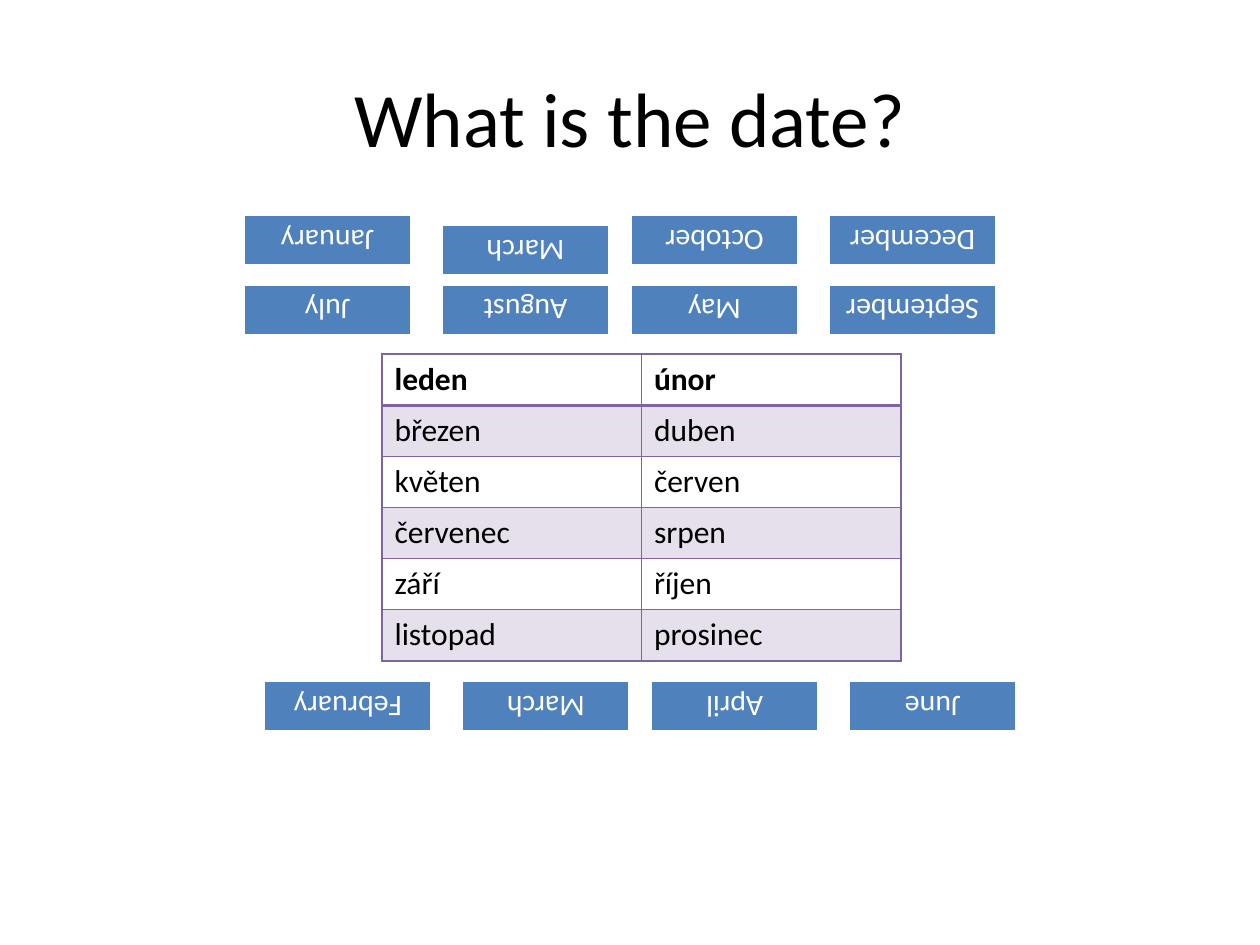
from lxml.etree import SubElement
from pptx import Presentation
from pptx.dml.color import RGBColor
from pptx.enum.shapes import MSO_SHAPE
from pptx.enum.text import MSO_ANCHOR, PP_ALIGN
from pptx.oxml.ns import qn
from pptx.util import Cm, Pt

FONT = "Calibri"
COLORS = {
    "text": "000000",
    "card": "4F81BD",
    "white": "FFFFFF",
    "border": "8064A2",
    "band": "E6E0EC",
}

CZECH_MONTHS = [
    ("leden", "únor"),
    ("březen", "duben"),
    ("květen", "červen"),
    ("červenec", "srpen"),
    ("září", "říjen"),
    ("listopad", "prosinec"),
]

CARD_LEFTS = [4.9, 8.89, 12.7, 16.69]
# Top of the row, its shift to the right, and its months
CARD_ROWS = [
    (4.32, 0, ["January", "March", "October", "December"]),
    (5.72, 0, ["July", "August", "May", "September"]),
    (13.72, 0.41, ["February", "March", "April", "June"]),
]
LOWERED_CARD = (0, 1)
LOWERED_BY = 0.2


def rgb(name):
    return RGBColor.from_string(COLORS[name])


def style_text(paragraph, size, color, bold=False):
    for run in paragraph.runs:
        font = run.font
        font.name, font.size, font.bold = FONT, Pt(size), bold
        font.color.rgb = rgb(color)


def set_title(slide, wording):
    title = slide.shapes.title
    title.left, title.top = Cm(1.27), Cm(0.76)
    title.width, title.height = Cm(22.86), Cm(3.18)
    frame = title.text_frame
    frame.text = wording
    frame.vertical_anchor = MSO_ANCHOR.MIDDLE
    frame.paragraphs[0].alignment = PP_ALIGN.CENTER
    style_text(frame.paragraphs[0], 44, "text")


def set_borders(cell, top, bottom):
    """Draw all four borders; top and bottom are widths in points."""
    properties = cell._tc.get_or_add_tcPr()
    for side, width in (("L", 1), ("R", 1), ("T", top), ("B", bottom)):
        line = SubElement(properties, qn(f"a:ln{side}"), w=str(Pt(width)))
        fill = SubElement(line, qn("a:solidFill"))
        SubElement(fill, qn("a:srgbClr"), val=COLORS["border"])


def add_month_table(slide):
    row_count, column_count = len(CZECH_MONTHS), len(CZECH_MONTHS[0])
    table = slide.shapes.add_table(
        row_count, column_count, Cm(7.7), Cm(7.14),
        Cm(5.23 * column_count), Cm(1.03 * row_count),
    ).table
    for row, months in enumerate(CZECH_MONTHS):
        for column, month in enumerate(months):
            cell = table.cell(row, column)
            cell.text = month
            style_text(cell.text_frame.paragraphs[0], 18, "text", bold=row == 0)
            set_borders(cell, 2 if row == 1 else 1, 2 if row == 0 else 1)
            if row % 2:
                cell.fill.solid()
                cell.fill.fore_color.rgb = rgb("band")
            else:
                cell.fill.background()


def add_month_card(slide, left, top, month):
    """Add a card with its month upside down."""
    card = slide.shapes.add_shape(
        MSO_SHAPE.RECTANGLE, Cm(left), Cm(top), Cm(3.4), Cm(1.04)
    )
    card.rotation = 180
    card.shadow.inherit = False
    card.fill.solid()
    card.fill.fore_color.rgb = rgb("card")
    card.line.color.rgb = rgb("white")
    card.line.width = Pt(2)
    frame = card.text_frame
    frame.margin_left = frame.margin_right = Cm(0.18)
    frame.margin_top = frame.margin_bottom = Cm(0.18)
    frame.vertical_anchor = MSO_ANCHOR.MIDDLE
    frame.text = month
    paragraph = frame.paragraphs[0]
    paragraph.alignment = PP_ALIGN.CENTER
    paragraph.line_spacing = 0.9
    style_text(paragraph, 17, "white")


def main():
    presentation = Presentation()
    presentation.slide_width, presentation.slide_height = Cm(25.4), Cm(19.05)
    slide = presentation.slides.add_slide(presentation.slide_layouts[5])
    set_title(slide, "What is the date?")
    add_month_table(slide)
    for row, (top, shift, months) in enumerate(CARD_ROWS):
        for column, (left, month) in enumerate(zip(CARD_LEFTS, months)):
            drop = LOWERED_BY if (row, column) == LOWERED_CARD else 0
            add_month_card(slide, left + shift, top + drop, month)
    presentation.save("out.pptx")


if __name__ == "__main__":
    main()
